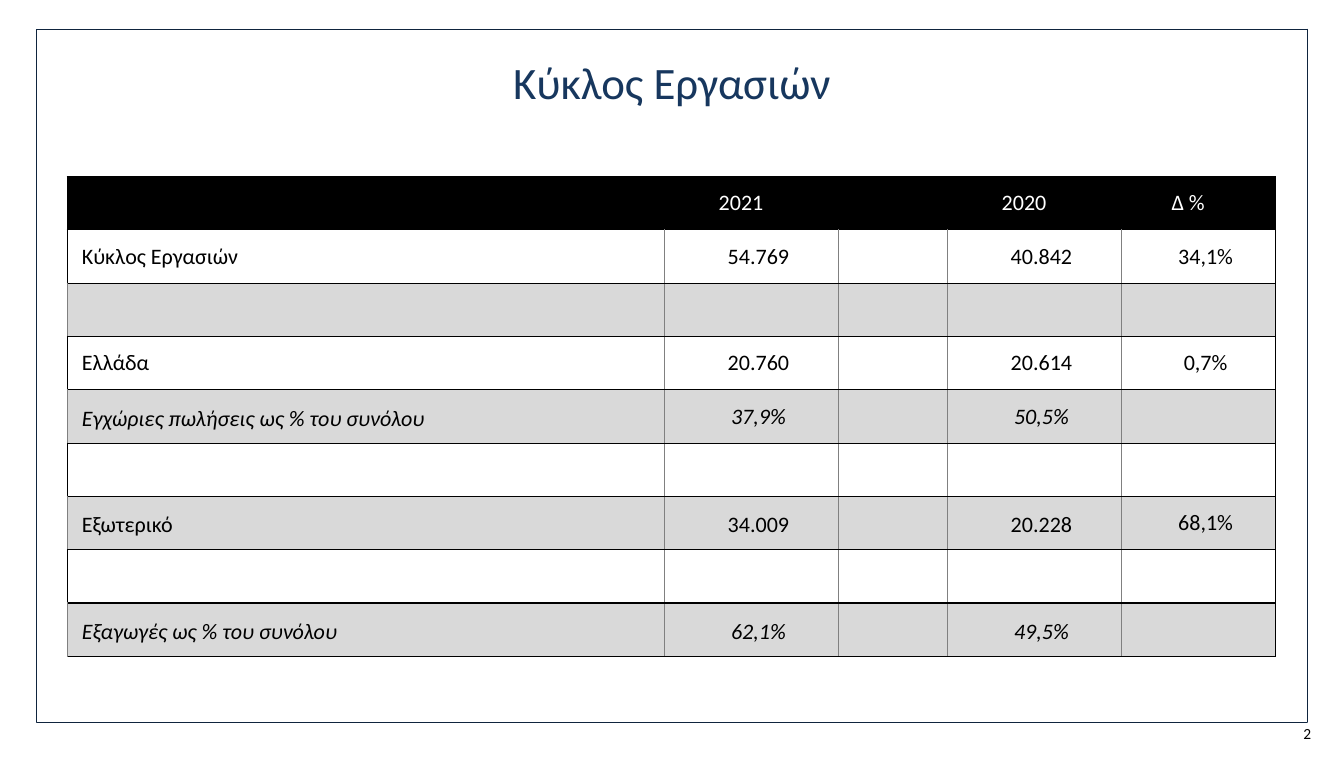
import dataclasses

import pptx
import pptx.dml.color
import pptx.enum.shapes
import pptx.enum.text
import pptx.oxml
import pptx.oxml.ns
import pptx.util

Cm = pptx.util.Cm
Pt = pptx.util.Pt
Align = pptx.enum.text.PP_ALIGN
Anchor = pptx.enum.text.MSO_ANCHOR


@dataclasses.dataclass(frozen=True)
class Theme:
    font: str = "Calibri"
    black: str = "000000"
    white: str = "FFFFFF"
    title: str = "17375E"
    frame: str = "0F243E"
    band: str = "D9D9D9"
    rule: str = "808080"
    title_size: float = 52.9
    table_size: float = 26
    number_size: float = 18.2
    thick: float = 1.5
    thin: float = 0.5
    frame_width: float = 0.25


THEME = Theme()
HEADER = ["", "2021", "", "2020", "Δ %"]
ROWS = [
    ["Κύκλος Εργασιών", "54.769", "", "40.842", "34,1%"],
    [""] * 5,
    ["Ελλάδα", "20.760", "", "20.614", "0,7%"],
    ["Εγχώριες πωλήσεις ως % του συνόλου", "37,9%", "", "50,5%", ""],
    [""] * 5,
    ["Εξωτερικό", "34.009", "", "20.228", "68,1%"],
    [""] * 5,
    ["Εξαγωγές ως % του συνόλου", "62,1%", "", "49,5%", ""],
]
COLUMN_WIDTHS = [24.82, 7.21, 4.55, 7.21, 6.43]
ROW_HEIGHT = 2.215
SHARE_ROWS = {4, 8}
LOW_LABEL_ROWS = {4, 6, 8}
LOW_VALUE_ROWS = {6, 8}


def rgb(value):
    return pptx.dml.color.RGBColor.from_string(value)


def format_paragraph(p, size, color, align, italic=False):
    p.alignment = align
    for r in p.runs:
        r.font.name = THEME.font
        r.font.size = Pt(size)
        r.font.italic = italic
        r.font.color.rgb = rgb(color)


def add_frame(slide):
    sp = slide.shapes.add_shape(
        pptx.enum.shapes.MSO_SHAPE.RECTANGLE,
        Cm(1.52), Cm(1.19), Cm(52.78), Cm(28.8))
    sp.shadow.inherit = False
    sp.fill.background()
    sp.line.color.rgb = rgb(THEME.frame)
    sp.line.width = Pt(THEME.frame_width)


def add_text(slide, text, box, size, color, align, anchor):
    tf = slide.shapes.add_textbox(*map(Cm, box)).text_frame
    tf.word_wrap = True
    tf.vertical_anchor = anchor
    tf.text = text
    p = tf.paragraphs[0]
    p.space_after = Pt(6)
    format_paragraph(p, size, color, align)


def set_borders(cell, row, col):
    header = row == 0
    black_left = header or (col == 0 and row % 2)
    black_right = header or col == len(HEADER) - 1
    tc_pr = cell._tc.get_or_add_tcPr()
    for side, black in (("L", black_left), ("R", black_right), ("T", True), ("B", True)):
        width = Pt(THEME.thick if black else THEME.thin)
        color = THEME.black if black else THEME.rule
        tc_pr.append(pptx.oxml.parse_xml(
            f'<a:ln{side} {pptx.oxml.ns.nsdecls("a")} w="{width}">'
            f'<a:solidFill><a:srgbClr val="{color}"/></a:solidFill></a:ln{side}>'))


def set_fill(cell, row):
    if row % 2:
        cell.fill.background()
    else:
        cell.fill.solid()
        cell.fill.fore_color.rgb = rgb(THEME.band if row else THEME.black)


def cell_anchor(row, col):
    low = (col == 0 and row in LOW_LABEL_ROWS) or (col in (1, 3) and row in LOW_VALUE_ROWS)
    return Anchor.BOTTOM if low else Anchor.MIDDLE


def fill_cell(cell, text, row, col):
    cell.margin_left = Cm(0.61)
    cell.margin_right = Cm(0 if row else 1.45)
    cell.margin_top = cell.margin_bottom = Cm(0.46)
    cell.vertical_anchor = cell_anchor(row, col)
    set_borders(cell, row, col)
    set_fill(cell, row)
    cell.text_frame.text = text
    format_paragraph(
        cell.text_frame.paragraphs[0], THEME.table_size,
        THEME.black if row else THEME.white,
        Align.CENTER if col else Align.LEFT, row in SHARE_ROWS)


def add_turnover_table(slide):
    data = [HEADER] + ROWS
    table = slide.shapes.add_table(
        len(data), len(HEADER), Cm(2.79), Cm(7.34),
        Cm(sum(COLUMN_WIDTHS)), Cm(ROW_HEIGHT * len(data))).table
    table.first_row = table.horz_banding = False
    for column, width in zip(table.columns, COLUMN_WIDTHS):
        column.width = Cm(width)
    for row, texts in enumerate(data):
        table.rows[row].height = Cm(ROW_HEIGHT)
        for col, text in enumerate(texts):
            fill_cell(table.cell(row, col), text, row, col)


def main():
    prs = pptx.Presentation()
    prs.slide_width, prs.slide_height = Cm(55.85), Cm(31.5)
    slide = prs.slides.add_slide(prs.slide_layouts[6])
    add_frame(slide)
    add_text(slide, "Κύκλος Εργασιών", (2.79, 1.27, 50.27, 4.24),
             THEME.title_size, THEME.title, Align.CENTER, Anchor.MIDDLE)
    add_turnover_table(slide)
    add_text(slide, "2", (41.71, 29.95, 13.03, 1.68),
             THEME.number_size, THEME.black, Align.RIGHT, Anchor.TOP)
    prs.save("out.pptx")


if __name__ == "__main__":
    main()
